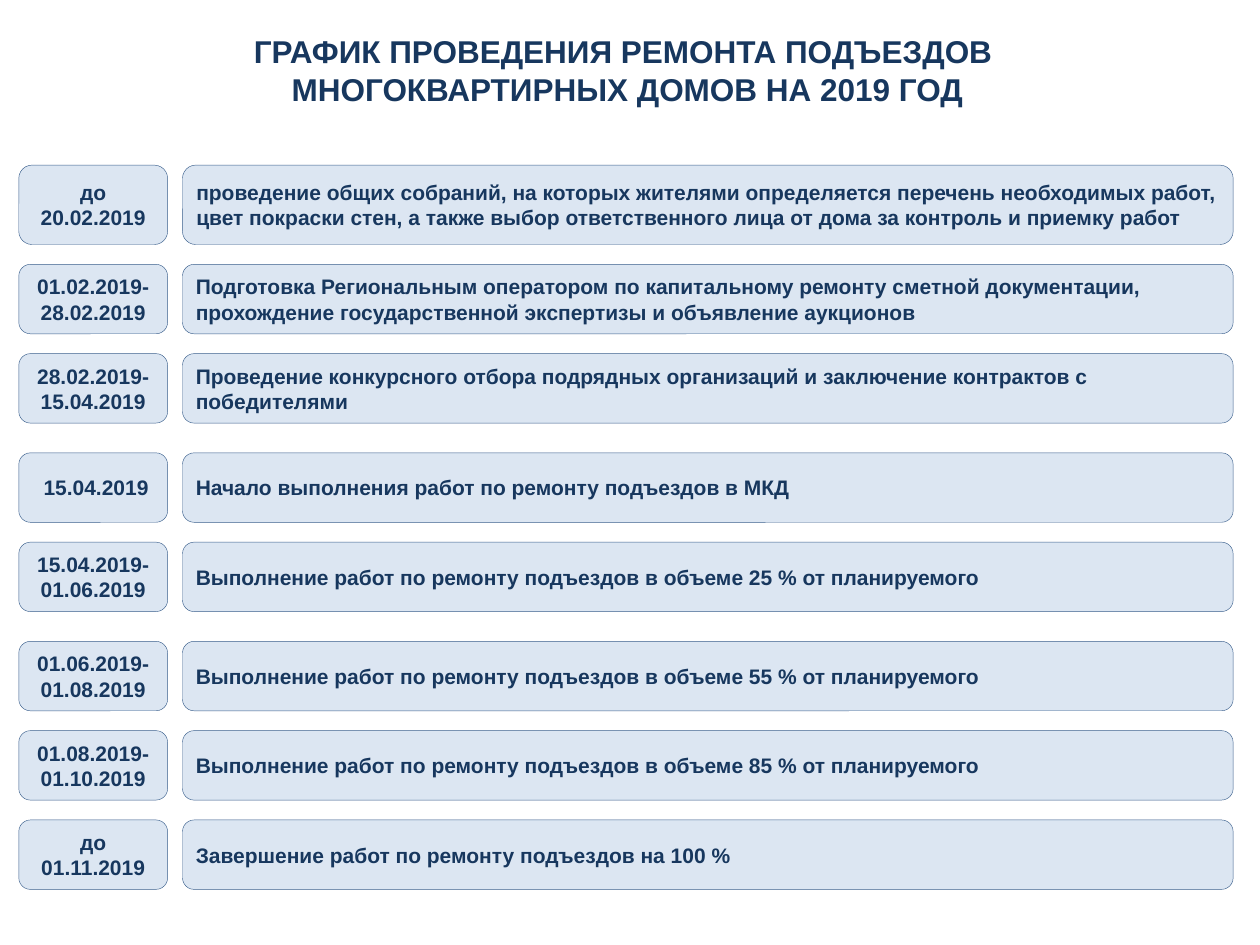
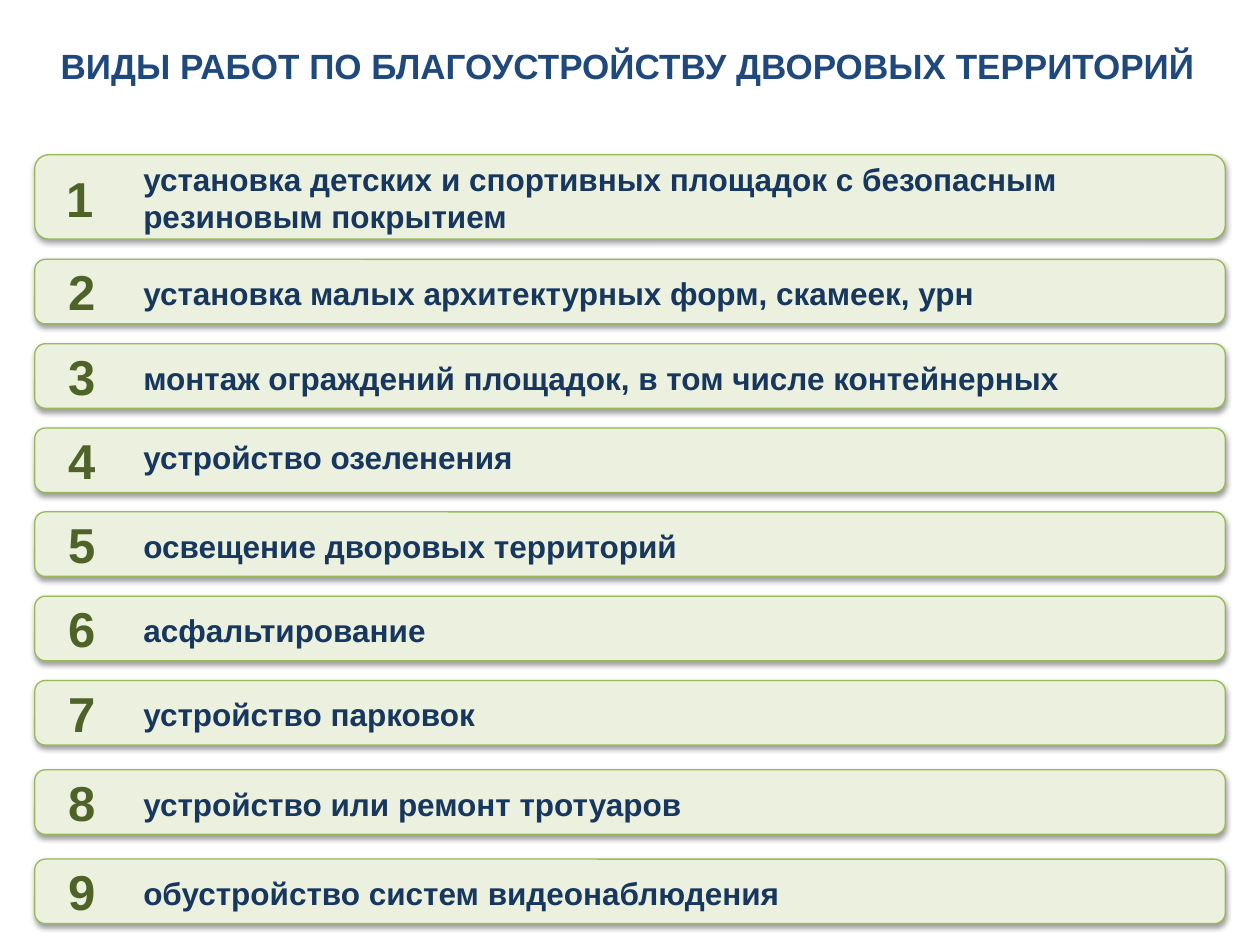
"""Build two slides: the 2019 entrance repair schedule and the list of courtyard works."""
from lxml import etree
from pptx import Presentation
from pptx.dml.color import RGBColor
from pptx.enum.shapes import MSO_SHAPE
from pptx.enum.text import MSO_ANCHOR as Anchor, MSO_AUTO_SIZE as AutoSize, PP_ALIGN as Align
from pptx.oxml.ns import qn
from pptx.util import Cm, Pt

COLORS = {
    "navy": "17375E", "blue": "1F497D", "pale_blue": "DCE6F2", "blue_line": "3A5F8C",
    "green": "4F6228", "pale_green": "EBF1DE", "green_line": "98B955", "shadow": "000000",
}
FONT = "Arial"


def write(box, lines, size, color, align=Align.LEFT, anchor=Anchor.MIDDLE,
          inset=(0.2, 0.1), wrap=True, grow=False):
    frame = box.text_frame
    frame.word_wrap = wrap
    frame.auto_size = AutoSize.SHAPE_TO_FIT_TEXT if grow else AutoSize.NONE
    frame.vertical_anchor = anchor
    frame.margin_left = frame.margin_right = Cm(inset[0])
    frame.margin_top = frame.margin_bottom = Cm(inset[1])
    frame.text = lines
    for para in frame.paragraphs:
        para.alignment = align
        para.font.name = FONT
        para.font.size = Pt(size)
        para.font.bold = True
        para.font.color.rgb = RGBColor.from_string(COLORS[color])


def add_panel(page, left, top, width, height, fill, line, weight):
    panel = page.shapes.add_shape(MSO_SHAPE.ROUNDED_RECTANGLE, Cm(left), Cm(top), Cm(width), Cm(height))
    panel.shadow.inherit = False
    panel.fill.solid()
    panel.fill.fore_color.rgb = RGBColor.from_string(COLORS[fill])
    panel.line.color.rgb = RGBColor.from_string(COLORS[line])
    panel.line.width = Pt(weight)
    return panel


deck = Presentation()
deck.slide_width, deck.slide_height = Cm(25.4), Cm(19.05)

titles = [
    ("ГРАФИК ПРОВЕДЕНИЯ РЕМОНТА ПОДЪЕЗДОВ \nМНОГОКВАРТИРНЫХ ДОМОВ НА 2019 ГОД", 0.5, 1.83, 18, "navy"),
    ("ВИДЫ РАБОТ ПО БЛАГОУСТРОЙСТВУ ДВОРОВЫХ ТЕРРИТОРИЙ", 0.74, 1.14, 20, "blue"),
]
pages = []
for wording, top, height, size, color in titles:
    page = deck.slides.add_slide(deck.slide_layouts[5])
    title = page.shapes.title
    title.left, title.top, title.width, title.height = Cm(-0.05), Cm(top), Cm(25.4), Cm(height)
    write(title, wording, size, color, Align.CENTER, Anchor.TOP, (0.28, 0.15), grow=True)
    pages.append(page)
schedule_page, works_page = pages

stages = [
    (3.33, "до 20.02.2019", "проведение общих собраний, на которых жителями определяется перечень "
     "необходимых работ, цвет покраски стен, а также выбор ответственного лица от дома "
     "за контроль и приемку работ"),
    (5.33, "01.02.2019-28.02.2019", "Подготовка Региональным оператором по капитальному ремонту "
     "сметной документации, прохождение государственной экспертизы и объявление аукционов"),
    (7.13, "28.02.2019-15.04.2019", "Проведение конкурсного отбора подрядных организаций "
     "и заключение контрактов с победителями"),
    (9.13, " 15.04.2019", "Начало выполнения работ по ремонту подъездов в МКД"),
    (10.93, "15.04.2019-01.06.2019", "Выполнение работ по ремонту подъездов в объеме 25 % от планируемого"),
    (12.93, "01.06.2019-01.08.2019", "Выполнение работ по ремонту подъездов в объеме 55 % от планируемого"),
    (14.73, "01.08.2019-01.10.2019", "Выполнение работ по ремонту подъездов в объеме 85 % от планируемого"),
    (16.53, "до 01.11.2019", "Завершение работ по ремонту подъездов на 100 %"),
]
for index, (top, dates, stage) in enumerate(stages):
    height = 1.6 if index == 0 else 1.4
    for left, width, wording, align in ((0.38, 3, dates, Align.CENTER), (3.68, 21.18, stage, Align.LEFT)):
        panel = add_panel(schedule_page, left, top, width, height, "pale_blue", "blue_line", 0.25)
        write(panel, wording, 12, "navy", align)

works = [
    (3.12, 0, "установка детских и спортивных площадок с безопасным резиновым покрытием"),
    (5.23, 0.2, "установка малых архитектурных форм, скамеек, урн"),
    (6.93, 0.2, "монтаж ограждений площадок, в том числе контейнерных"),
    (8.63, 0.1, "устройство озеленения"),
    (10.32, 0.2, "освещение дворовых территорий"),
    (12.02, 0.2, "асфальтирование"),
    (13.72, 0.2, "устройство парковок"),
    (15.52, 0.2, "устройство или ремонт тротуаров"),
    (17.32, 0.2, "обустройство систем видеонаблюдения"),
]
for number, (top, text_drop, work) in enumerate(works, 1):
    first = number == 1
    panel = add_panel(works_page, 0.7, top, 24, 1.7 if first else 1.3, "pale_green", "green_line", 0.75)
    effects = panel._element.spPr.find(qn("a:effectLst"))
    shadow = etree.SubElement(effects, qn("a:outerShdw"), blurRad="40000", dist="20000",
                              dir="5400000", rotWithShape="0")
    shade = etree.SubElement(shadow, qn("a:srgbClr"), val=COLORS["shadow"])
    etree.SubElement(shade, qn("a:alpha"), val="38000")

    label = works_page.shapes.add_textbox(Cm(2.69), Cm(top + text_drop), Cm(22.6), Cm(1.75 if first else 1))
    write(label, work, 18, "navy", anchor=Anchor.TOP, grow=True)
    number_drop = 0.15 if first else -0.08
    badge = works_page.shapes.add_textbox(Cm(1.09 if first else 1.12), Cm(top + number_drop), Cm(1.07), Cm(1.45))
    write(badge, str(number), 28, "green", Align.LEFT if first else Align.CENTER,
          Anchor.TOP if first else Anchor.MIDDLE, (0.25, 0.13), wrap=False, grow=True)

deck.save("out.pptx")
